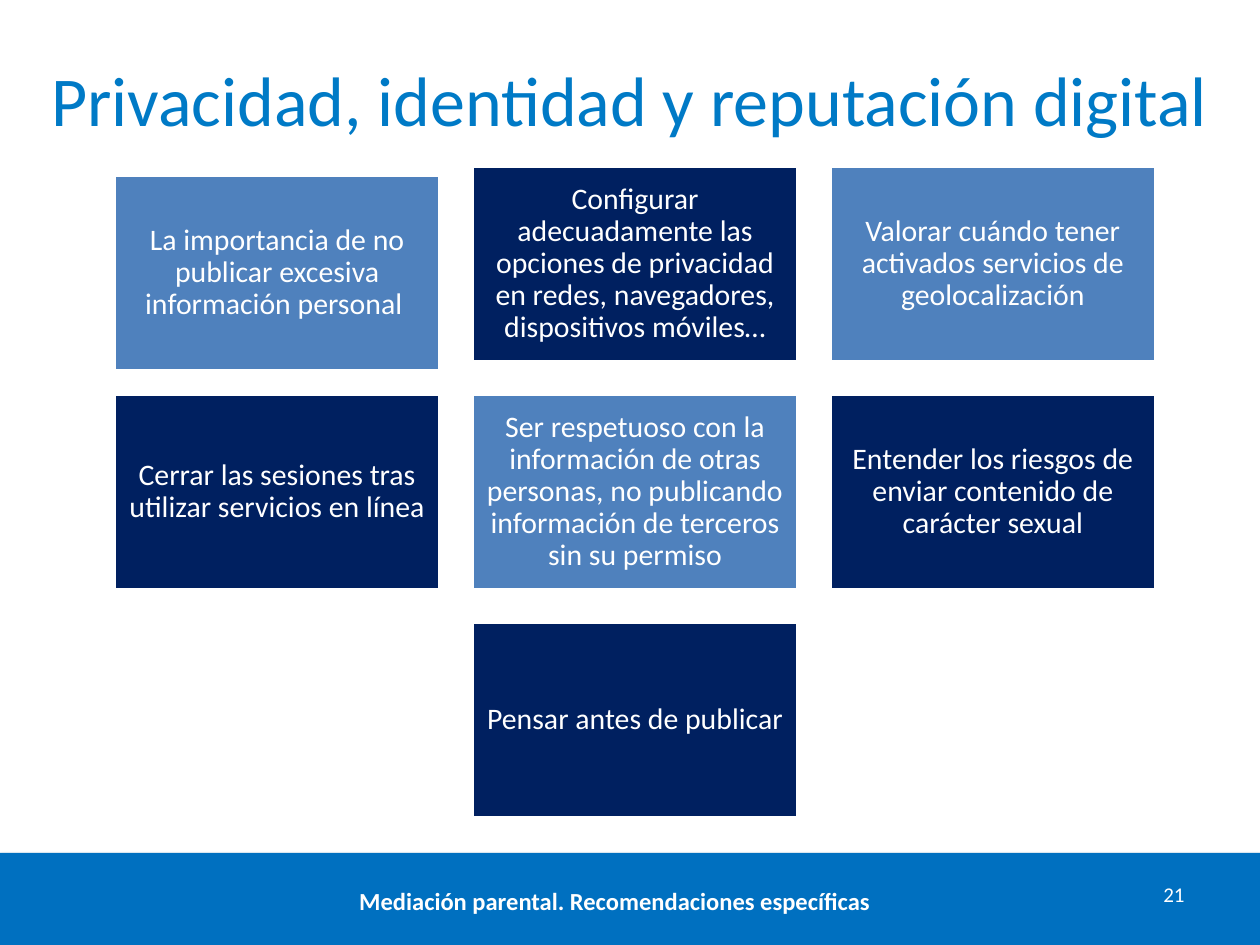
from dataclasses import dataclass

from pptx import Presentation
from pptx.dml.color import RGBColor
from pptx.enum.shapes import MSO_SHAPE
from pptx.enum.text import MSO_ANCHOR, PP_ALIGN
from pptx.util import Inches, Pt


@dataclass(frozen=True)
class Theme:
    """Colours, font and type sizes of the deck."""
    font: str = "Calibri"
    title: str = "007AC6"
    bar: str = "0070C0"
    light: str = "4F81BD"
    dark: str = "002060"
    white: str = "FFFFFF"
    title_size: int = 40
    card_size: int = 17
    footer_size: int = 14
    number_size: int = 12


CARDS = [
    (0, 0, "La importancia de no publicar excesiva información personal "),
    (1, 0, "Configurar adecuadamente las opciones de privacidad en redes, "
           "navegadores, dispositivos móviles…"),
    (2, 0, "Valorar cuándo tener activados servicios de geolocalización"),
    (0, 1, "Cerrar las sesiones tras utilizar servicios en línea"),
    (1, 1, "Ser respetuoso con la información de otras personas, no publicando "
           "información de terceros sin su permiso"),
    (2, 1, "Entender los riesgos de enviar contenido de carácter sexual"),
    (1, 2, "Pensar antes de publicar"),
]
LEFT, TOP, STEP_X, STEP_Y = 0.91, 1.32, 2.84, 1.81
CARD_W, CARD_H = 2.58, 1.55
FIRST_CARD_DROP = 0.07


def write(tf, text, size, color, align=PP_ALIGN.CENTER, bold=False, spacing=None):
    """Write one formatted paragraph into a text frame."""
    tf.word_wrap = True
    p = tf.paragraphs[0]
    p.alignment = align
    if spacing:
        p.line_spacing = spacing
    r = p.add_run()
    r.text = text
    r.font.name = Theme.font
    r.font.size = Pt(size)
    r.font.bold = bold
    r.font.color.rgb = RGBColor.from_string(color)


class SlideBuilder:
    """Holds the theme and the current slide."""

    def __init__(self, slide, theme):
        self.s = slide
        self.theme = theme

    def title(self, text, x, y, w, h):
        """Place and fill the title placeholder."""
        sp = self.s.shapes.title
        sp.left, sp.top, sp.width, sp.height = map(Inches, (x, y, w, h))
        sp.text_frame.vertical_anchor = MSO_ANCHOR.MIDDLE
        write(sp.text_frame, text, self.theme.title_size, self.theme.title)

    def rect(self, x, y, w, h, fill):
        """Add a filled rectangle."""
        sp = self.s.shapes.add_shape(MSO_SHAPE.RECTANGLE, *map(Inches, (x, y, w, h)))
        sp.fill.solid()
        sp.fill.fore_color.rgb = RGBColor.from_string(fill)
        return sp

    def bar(self, x, y, w, h):
        """Add the footer band, keeping its theme shadow."""
        self.rect(x, y, w, h, self.theme.bar).line.fill.background()

    def card(self, text, x, y, fill):
        """Add a white-edged card with centred text."""
        sp = self.rect(x, y, CARD_W, CARD_H, fill)
        sp.shadow.inherit = False
        sp.line.color.rgb = RGBColor.from_string(self.theme.white)
        sp.line.width = Pt(2)
        tf = sp.text_frame
        tf.margin_left = tf.margin_right = tf.margin_top = tf.margin_bottom = Inches(0.07)
        tf.vertical_anchor = MSO_ANCHOR.MIDDLE
        write(tf, text, self.theme.card_size, self.theme.white, spacing=0.9)

    def label(self, text, x, y, w, h, size, **fmt):
        """Add a white text box."""
        tb = self.s.shapes.add_textbox(*map(Inches, (x, y, w, h)))
        write(tb.text_frame, text, size, self.theme.white, **fmt)


def main():
    """Build and save the slide."""
    prs = Presentation()
    prs.slide_width, prs.slide_height = Inches(10), Inches(7.5)
    theme = Theme()
    b = SlideBuilder(prs.slides.add_slide(prs.slide_layouts[5]), theme)
    b.bar(0, 6.77, 10, 0.76)
    b.title("Privacidad, identidad y reputación digital", 0.17, 0.16, 9.65, 1.25)
    b.label("21", 8.7, 6.95, 0.8, 0.4, theme.number_size, align=PP_ALIGN.RIGHT)
    for i, (col, row, text) in enumerate(CARDS):
        drop = FIRST_CARD_DROP if i == 0 else 0
        fill = theme.light if i in (0, 2, 4) else theme.dark
        b.card(text, LEFT + col * STEP_X, TOP + row * STEP_Y + drop, fill)
    b.label("Mediación parental. Recomendaciones específicas",
            1.85, 6.98, 6.06, 0.4, theme.footer_size, bold=True)
    prs.save("out.pptx")


if __name__ == "__main__":
    main()
